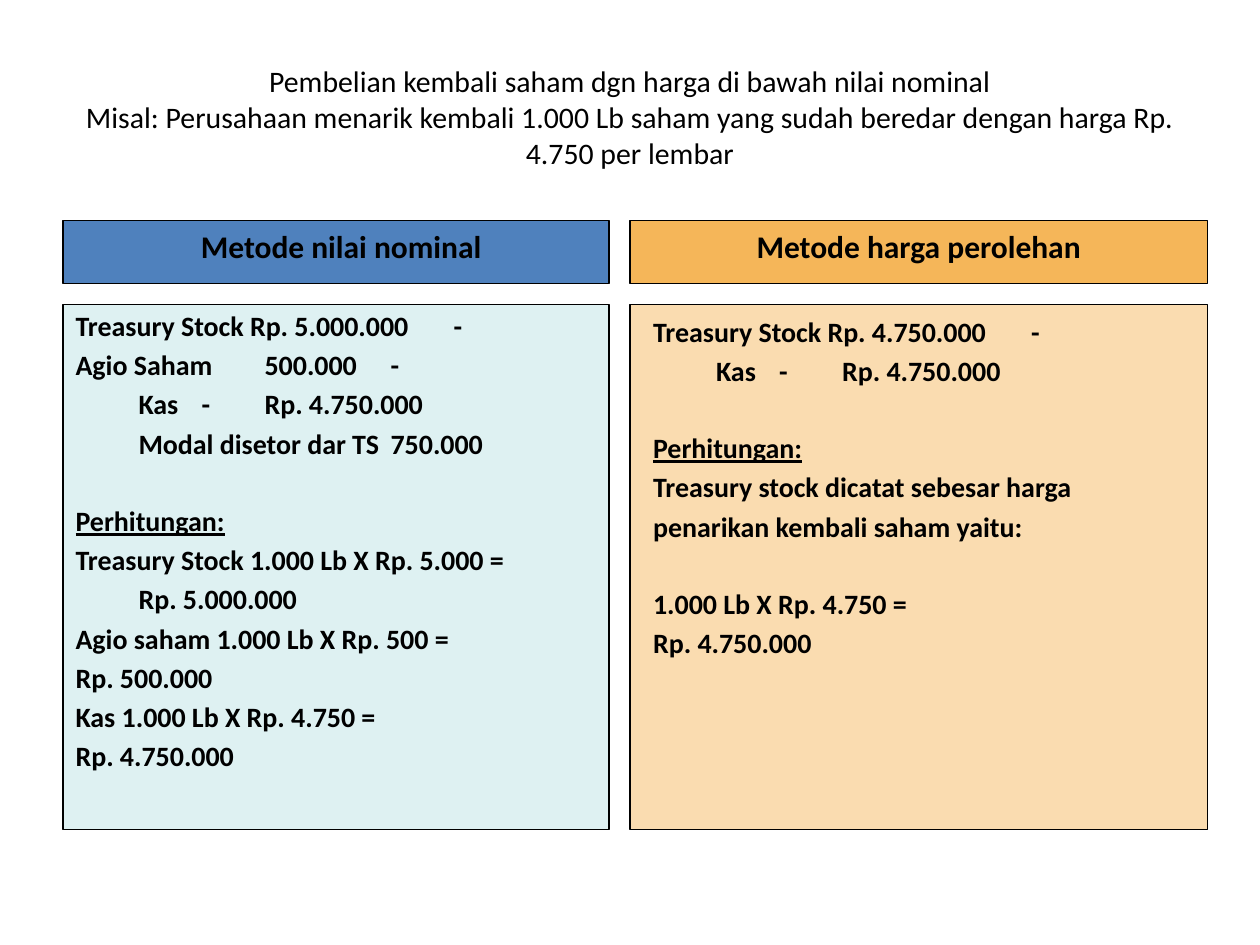
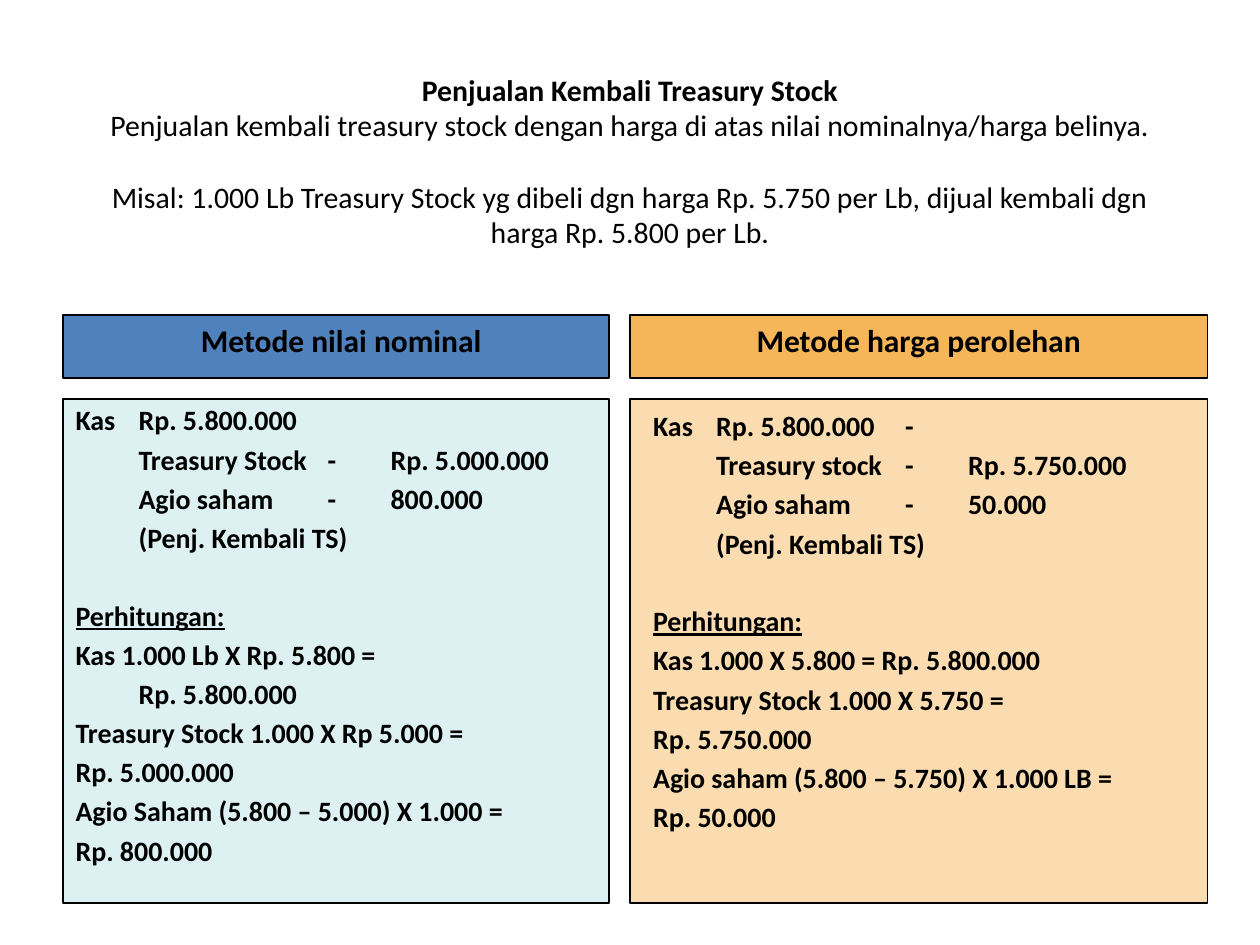
from lxml.etree import SubElement
from pptx import Presentation
from pptx.dml.color import RGBColor
from pptx.enum.shapes import MSO_SHAPE
from pptx.enum.text import MSO_ANCHOR, MSO_AUTO_SIZE, PP_ALIGN
from pptx.oxml.ns import qn
from pptx.util import Inches, Pt

COLOURS = {
    "text": "000000",
    "nominal_head": "4F81BD",
    "nominal_body": "DEF1F2",
    "cost_head": "F5B659",
    "cost_body": "FADCB0",
}
FONT = "Calibri"
TITLE_SIZE, HEAD_SIZE, ENTRY_SIZE = 17, 18, 16
TWO_CONTENT = 3
CALCULATION = "Perhitungan:"

# Both methods: heading, colour key, panel (column, width), text column, size of the gap line
METHODS = [
    ("Metode nilai nominal", "nominal", (6, 52), 6, ENTRY_SIZE),
    ("Metode harga perolehan", "cost", (60, 55), 61, HEAD_SIZE),
]
TEXT_COLUMNS = 53
HEAD_ROWS = 6
BODY_OFFSET = 8


def rgb(key):
    return RGBColor.from_string(COLOURS[key])


class Deck:
    """Style and current slide; lengths are cells of a 120 by 90 grid."""

    def __init__(self):
        self.presentation = Presentation()
        self.presentation.slide_width = Inches(10)
        self.presentation.slide_height = Inches(7.5)
        self.cell = self.presentation.slide_width / 120
        self.slide = None

    def new_slide(self):
        layout = self.presentation.slide_layouts[TWO_CONTENT]
        self.slide = self.presentation.slides.add_slide(layout)
        for placeholder in list(self.slide.placeholders):
            if placeholder.placeholder_format.idx > 2:
                placeholder.element.getparent().remove(placeholder.element)

    def span(self, *cells):
        return [round(cell * self.cell) for cell in cells]

    def place(self, index, *cells):
        """Move a placeholder and return its text frame."""
        holder = self.slide.placeholders[index]
        holder.left, holder.top, holder.width, holder.height = self.span(*cells)
        frame = holder.text_frame
        frame.word_wrap = True
        frame.auto_size = MSO_AUTO_SIZE.NONE
        return frame

    def paragraph(self, frame, text, size, bold=False, gap=0):
        """Fill the first empty paragraph or add one; gap is the size of a skipped line."""
        first = frame.paragraphs[0]
        paragraph = first if not first.runs else frame.add_paragraph()
        paragraph.text = text
        font = paragraph.font
        font.name, font.size, font.bold = FONT, Pt(size), bold
        font.color.rgb = rgb("text")
        if gap:
            paragraph.space_before = Pt(round(gap * 1.57, 1))
        return paragraph

    def title(self, rows, lines):
        frame = self.place(0, 6, 3.6, 108, rows)
        frame.vertical_anchor = MSO_ANCHOR.MIDDLE
        for text, bold, gap in lines:
            line = self.paragraph(frame, text, TITLE_SIZE, bold, gap)
            line.alignment = PP_ALIGN.CENTER

    def panel(self, colour, *cells):
        panel = self.slide.shapes.add_shape(MSO_SHAPE.RECTANGLE, *self.span(*cells))
        panel.shadow.inherit = False
        panel.fill.solid()
        panel.fill.fore_color.rgb = rgb(colour)
        panel.line.color.rgb = rgb("text")
        panel.line.width = Pt(0.75)
        # Panels lie behind the placeholders
        self.slide.shapes._spTree.insert(2, panel.element)

    def entry(self, frame, row, size=ENTRY_SIZE, gap=0):
        """A row is plain text, or (inches, text) pairs set on tab stops."""
        cells = [(0, row)] if isinstance(row, str) else row
        text = "".join(("\t" if x else "") + part for x, part in cells)
        paragraph = self.paragraph(frame, text, size, True, gap)
        properties = paragraph._p.get_or_add_pPr()
        properties.set("marL", "0")
        properties.set("indent", "0")
        defaults = properties.find(qn("a:defRPr"))
        bullet = SubElement(properties, qn("a:buNone"))
        tabs = SubElement(properties, qn("a:tabLst"))
        for x, _ in cells:
            if x:
                SubElement(tabs, qn("a:tab"), pos=str(Inches(x)), algn="l")
        defaults.addprevious(bullet)
        defaults.addprevious(tabs)
        if text == CALCULATION:
            paragraph.font.underline = True
        return paragraph

    def method(self, index, top, body_rows, text_rows, blocks):
        """Heading band, body panel and the journal text over both."""
        heading, key, (left, width), text_left, gap = METHODS[index]
        self.panel(key + "_head", left, top, width, HEAD_ROWS)
        self.panel(key + "_body", left, top + BODY_OFFSET, width, body_rows)
        frame = self.place(index + 1, text_left, top, TEXT_COLUMNS, text_rows)
        frame.vertical_anchor = MSO_ANCHOR.TOP
        self.entry(frame, heading, HEAD_SIZE).alignment = PP_ALIGN.CENTER
        for block in blocks:
            for row in block:
                self.entry(frame, row, gap=gap)
                gap = 0
            gap = ENTRY_SIZE


# Title lines are (text, bold, gap); each journal is a list of blocks with a line between
BUYBACK = {
    "title_rows": 15,
    "title": [
        ("Pembelian kembali saham dgn harga di bawah nilai nominal", False, 0),
        ("Misal: Perusahaan menarik kembali 1.000 Lb saham yang sudah beredar "
         "dengan harga Rp. 4.750 per lembar", False, 0),
    ],
    "top": 21,
    "body_rows": 50,
    "text_rows": (55.4, 55.4),
    "journals": [
        [
            [
                [(0, "Treasury Stock Rp. 5.000.000"), (3.14, "-")],
                [(0, "Agio Saham"), (1.88, "500.000"), (3.11, "-")],
                [(0.2, "Kas"), (1.87, "-"), (2.19, "Rp. 4.750.000")],
                [(0.2, "Modal disetor dar TS"), (2.81, "750.000")],
            ],
            [
                CALCULATION,
                "Treasury Stock 1.000 Lb X Rp. 5.000 =",
                [(0.05, "Rp. 5.000.000")],
                "Agio saham 1.000 Lb X Rp. 500 =",
                "Rp. 500.000",
                "Kas 1.000 Lb X Rp. 4.750 =",
                "Rp. 4.750.000",
            ],
        ],
        [
            [
                [(0, "Treasury Stock Rp. 4.750.000"), (3.09, "-")],
                [(0.3, "Kas"), (1.82, "-"), (2.24, "Rp. 4.750.000")],
            ],
            [
                CALCULATION,
                "Treasury stock dicatat sebesar harga",
                "penarikan kembali saham yaitu:",
            ],
            ["1.000 Lb X Rp. 4.750 =", "Rp. 4.750.000"],
        ],
    ],
}

RESALE = {
    "title_rows": 23.4,
    "title": [
        ("Penjualan Kembali Treasury Stock", True, 0),
        ("Penjualan kembali treasury stock dengan harga di atas nilai "
         "nominalnya/harga belinya.", False, 0),
        ("Misal: 1.000 Lb Treasury Stock yg dibeli dgn harga Rp. 5.750 per Lb, "
         "dijual kembali dgn harga Rp. 5.800 per Lb.", False, 13),
    ],
    "top": 30,
    "body_rows": 48,
    "text_rows": (55.4, 47),
    "journals": [
        [
            [
                [(0, "Kas"), (1.27, "Rp. 5.800.000")],
                [(0.1, "Treasury Stock"), (1.89, "-"), (2.2, "Rp. 5.000.000")],
                [(0.1, "Agio saham"), (1.87, "-"), (2.69, "800.000")],
                [(0.1, "(Penj. Kembali TS)")],
            ],
            [
                CALCULATION,
                "Kas 1.000 Lb X Rp. 5.800 =",
                [(0.05, "Rp. 5.800.000")],
                "Treasury Stock 1.000 X Rp 5.000 =",
                "Rp. 5.000.000",
                "Agio Saham (5.800 – 5.000) X 1.000 =",
                "Rp. 800.000",
            ],
        ],
        [
            [
                [(0, "Kas"), (0.97, "Rp. 5.800.000"), (2.68, "-")],
                [(0.15, "Treasury stock"), (1.77, "-"), (2.19, "Rp. 5.750.000")],
                [(0.15, "Agio saham"), (1.77, "-"), (2.74, "50.000")],
                [(0.15, "(Penj. Kembali TS)")],
            ],
            [
                CALCULATION,
                "Kas 1.000 X 5.800 = Rp. 5.800.000",
                "Treasury Stock 1.000 X 5.750 =",
                "Rp. 5.750.000",
                "Agio saham (5.800 – 5.750) X 1.000 LB =",
                "Rp. 50.000",
            ],
        ],
    ],
}


def main():
    deck = Deck()
    for case in (BUYBACK, RESALE):
        deck.new_slide()
        deck.title(case["title_rows"], case["title"])
        for index, blocks in enumerate(case["journals"]):
            deck.method(index, case["top"], case["body_rows"],
                        case["text_rows"][index], blocks)
    deck.presentation.save("out.pptx")


if __name__ == "__main__":
    main()
